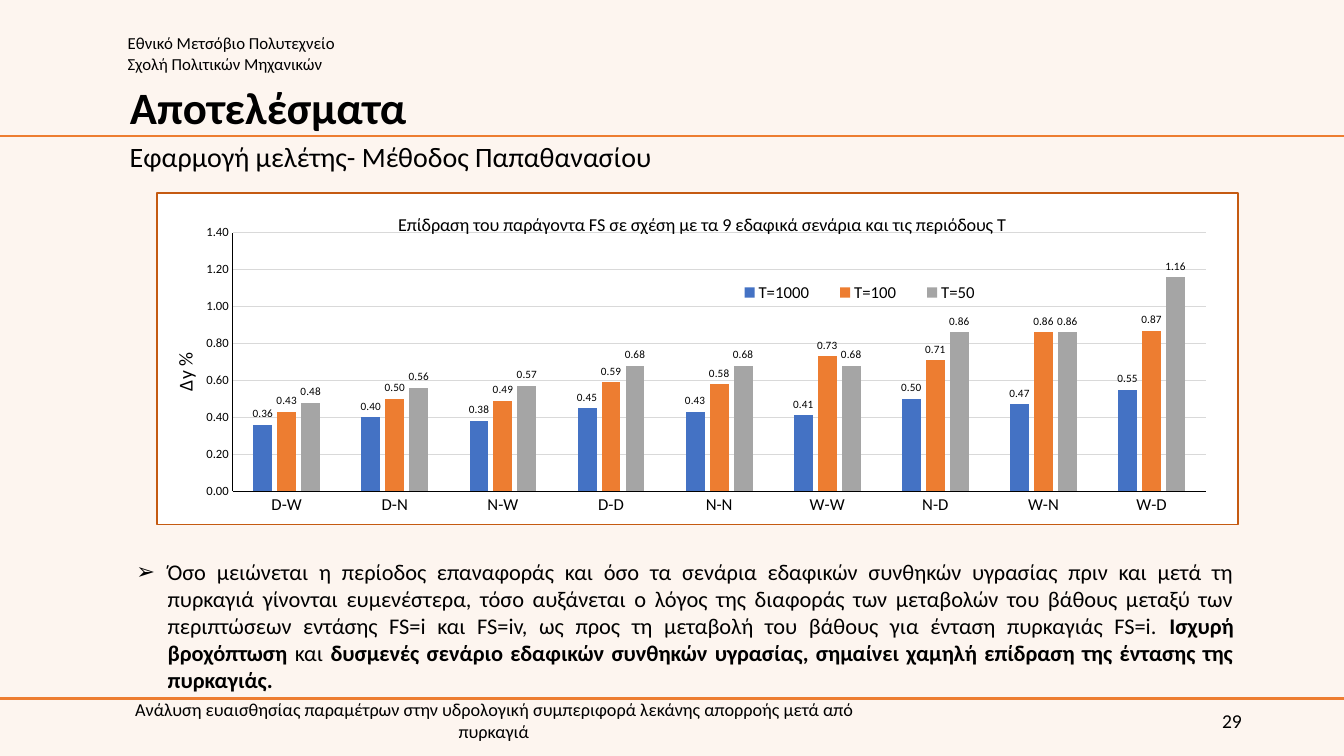
from lxml.etree import SubElement
from pptx import Presentation
from pptx.chart.data import CategoryChartData
from pptx.dml.color import RGBColor
from pptx.enum.chart import XL_CHART_TYPE as ChartType, XL_LABEL_POSITION as LabelPosition
from pptx.enum.chart import XL_LEGEND_POSITION as LegendPosition, XL_TICK_MARK as TickMark
from pptx.enum.shapes import MSO_CONNECTOR as Connector
from pptx.enum.text import MSO_ANCHOR as Anchor, MSO_AUTO_SIZE as AutoSize, PP_ALIGN as Align
from pptx.oxml import parse_xml
from pptx.oxml.ns import nsdecls, qn
from pptx.util import Cm, Pt

WIDTH, HEIGHT = 33.87, 19.05
CATEGORIES = ["D-W", "D-N", "N-W", "D-D", "N-N", "W-W", "N-D", "W-N", "W-D"]
SERIES = [
    ("T=1000", "4472C4", (0.36, 0.40, 0.38, 0.45, 0.43, 0.41, 0.50, 0.47, 0.55)),
    ("T=100", "ED7D31", (0.43, 0.50, 0.49, 0.59, 0.58, 0.73, 0.71, 0.86, 0.87)),
    ("T=50", "A5A5A5", (0.48, 0.56, 0.57, 0.68, 0.68, 0.68, 0.86, 0.86, 1.16)),
]
FINDING = [
    ("Όσο μειώνεται η περίοδος επαναφοράς και όσο τα σενάρια εδαφικών συνθηκών υγρασίας "
     "πριν και μετά τη πυρκαγιά γίνονται ευμενέστερα, τόσο αυξάνεται ο λόγος της διαφοράς "
     "των μεταβολών του βάθους μεταξύ των περιπτώσεων εντάσης FS=i και FS=iv, ως προς τη "
     "μεταβολή του βάθους για ένταση πυρκαγιάς FS=i. ", False),
    ("Ισχυρή βροχόπτωση", True),
    (" και ", False),
    ("δυσμενές σενάριο εδαφικών συνθηκών υγρασίας, σημαίνει χαμηλή επίδραση της έντασης "
     "της πυρκαγιάς.", True),
]


def color(hex_text):
    return RGBColor.from_string(hex_text)


def set_layout(element, x, y, width=None, height=None, inner=False):
    """Place a chart part by fractions of the chart area."""
    for old in element.findall(qn("c:layout")):
        element.remove(old)
    layout = parse_xml(f"<c:layout {nsdecls('c')}><c:manualLayout/></c:layout>")
    settings = [("layoutTarget", "inner")] if inner else []
    settings += [("xMode", "edge"), ("yMode", "edge"), ("x", x), ("y", y)]
    if width:
        settings += [("w", width), ("h", height)]
    for name, value in settings:
        SubElement(layout[0], qn(f"c:{name}")).set("val", str(value))
    overlay = element.find(qn("c:overlay"))
    if overlay is None:
        element.insert(0, layout)
    else:
        overlay.addprevious(layout)


class SlideBuilder:
    font_name = "Calibri"
    ink = "000000"
    accent = "ED7D31"

    def __init__(self, slide):
        self.slide = slide

    def style(self, font, size, bold=False):
        font.name, font.size, font.bold = self.font_name, Pt(size), bold
        font.color.rgb = color(self.ink)

    def background(self, fill):
        self.slide.background.fill.solid()
        self.slide.background.fill.fore_color.rgb = color(fill)

    def rule(self, y):
        line = self.slide.shapes.add_connector(Connector.STRAIGHT, 0, Cm(y), Cm(WIDTH), Cm(y))
        line.line.color.rgb = color(self.accent)
        line.line.width = Pt(1.5)
        SubElement(line.element.spPr, qn("a:effectLst"))

    def place(self, shape, box, anchor):
        shape.left, shape.top, shape.width, shape.height = map(Cm, box)
        frame = shape.text_frame
        frame.word_wrap, frame.auto_size = True, AutoSize.NONE
        frame.vertical_anchor = anchor
        return frame

    def text(self, text, box, size, align=Align.LEFT, anchor=Anchor.TOP):
        frame = self.place(self.slide.shapes.add_textbox(0, 0, 0, 0), box, anchor)
        frame.text = text
        for paragraph in frame.paragraphs:
            paragraph.alignment = align
            self.style(paragraph.runs[0].font, size)

    def title(self, text, box, size):
        frame = self.place(self.slide.shapes.title, box, Anchor.MIDDLE)
        frame.text = text
        paragraph = frame.paragraphs[0]
        paragraph.alignment, paragraph.line_spacing = Align.LEFT, 0.9
        self.style(paragraph.runs[0].font, size, True)

    def bullet(self, parts, box, size):
        frame = self.place(self.slide.placeholders[1], box, Anchor.TOP)
        paragraph = frame.paragraphs[0]
        properties = paragraph._p.get_or_add_pPr()
        properties.set("marL", str(Cm(0.79)))
        properties.set("indent", str(-Cm(0.79)))
        SubElement(properties, qn("a:buChar")).set("char", "➢")
        paragraph.alignment, paragraph.space_before = Align.JUSTIFY, Pt(0)
        for text, bold in parts:
            run = paragraph.add_run()
            run.text = text
            self.style(run.font, size, bold)

    def caption(self, title, text, size, x, y):
        """Write and place a chart title or an axis title."""
        title.text_frame.text = text
        self.style(title.text_frame.paragraphs[0].runs[0].font, size)
        set_layout(title.element, x, y)

    def column_chart(self, box):
        data = CategoryChartData(number_format="0.00")
        data.categories = CATEGORIES
        for name, _, values in SERIES:
            data.add_series(name, values)
        chart = self.slide.shapes.add_chart(
            ChartType.COLUMN_CLUSTERED, *map(Cm, box), data).chart
        self.style(chart.font, 10)
        chart.element.find(qn("c:chart")).addnext(parse_xml(
            f"<c:spPr {nsdecls('c', 'a')}><a:solidFill><a:srgbClr val='FFFFFF'/></a:solidFill>"
            "<a:ln w='12700'><a:solidFill><a:srgbClr val='C55A11'/></a:solidFill></a:ln></c:spPr>"))
        self.caption(chart.chart_title, "Επίδραση του παράγοντα FS σε σχέση με τα 9 εδαφικά "
                     "σενάρια και τις περιόδους Τ", 13, 0.22, 0.05)
        set_layout(chart.element.find(".//" + qn("c:plotArea")), 0.07, 0.12, 0.9, 0.78, True)
        self.axes(chart)
        self.columns(chart.plots[0])
        chart.has_legend = True
        chart.legend.position = LegendPosition.RIGHT
        chart.legend.include_in_layout = False
        self.style(chart.legend.font, 12)
        set_layout(chart.element.find(".//" + qn("c:legend")), 0.52, 0.25, 0.26, 0.1)

    def axes(self, chart):
        for axis, size in ((chart.category_axis, 12), (chart.value_axis, 9)):
            axis.major_tick_mark = axis.minor_tick_mark = TickMark.NONE
            axis.format.line.color.rgb = color(self.ink)
            axis.format.line.width = Pt(0.75)
            self.style(axis.tick_labels.font, size)
        axis = chart.value_axis
        axis.minimum_scale, axis.maximum_scale, axis.major_unit = 0, 1.4, 0.2
        axis.tick_labels.number_format = "0.00"
        axis.tick_labels.number_format_is_linked = False
        axis.major_gridlines.format.line.color.rgb = color("D9D9D9")
        axis.major_gridlines.format.line.width = Pt(0.75)
        self.caption(axis.axis_title, "Δy %", 14, 0.01, 0.47)
        body = chart.element.find(".//" + qn("c:valAx")).find(".//" + qn("a:bodyPr"))
        body.set("rot", "-5400000")
        body.set("vert", "horz")

    def columns(self, plot):
        plot.gap_width, plot.overlap, plot.vary_by_categories = 219, -27, False
        for series, (_, fill, _) in zip(plot.series, SERIES):
            series.format.fill.solid()
            series.format.fill.fore_color.rgb = color(fill)
            labels = series.data_labels
            labels.show_value, labels.position = True, LabelPosition.OUTSIDE_END
            labels.number_format, labels.number_format_is_linked = "0.00", False
            self.style(labels.font, 8)


def main():
    presentation = Presentation()
    presentation.slide_width, presentation.slide_height = Cm(WIDTH), Cm(HEIGHT)
    builder = SlideBuilder(presentation.slides.add_slide(presentation.slide_layouts[1]))
    builder.background("FDF5EF")
    builder.text("Εθνικό Μετσόβιο Πολυτεχνείο\nΣχολή Πολιτικών Μηχανικών",
                 (2.97, 0.71, 10.97, 1.27), 12)
    for y in (17.6, 3.43):
        builder.rule(y)
    builder.title("Αποτελέσματα", (3.02, 1.55, 14.73, 2.44), 32)
    builder.text("Εφαρμογή μελέτης- Μέθοδος Παπαθανασίου", (3.02, 3.4, 14.25, 1.12), 20)
    builder.column_chart((3.94, 4.85, 27.28, 8.38))
    builder.bullet(FINDING, (3.18, 13.94, 28.17, 3), 16)
    builder.text("Ανάλυση ευαισθησίας παραμέτρων στην υδρολογική συμπεριφορά λεκάνης απορροής "
                 "μετά από πυρκαγιά", (2.26, 17.65, 20.37, 1.02), 13, Align.CENTER, Anchor.MIDDLE)
    builder.text("29", (23.93, 17.65, 7.62, 1.02), 14, Align.RIGHT, Anchor.MIDDLE)
    presentation.save("out.pptx")


if __name__ == "__main__":
    main()
